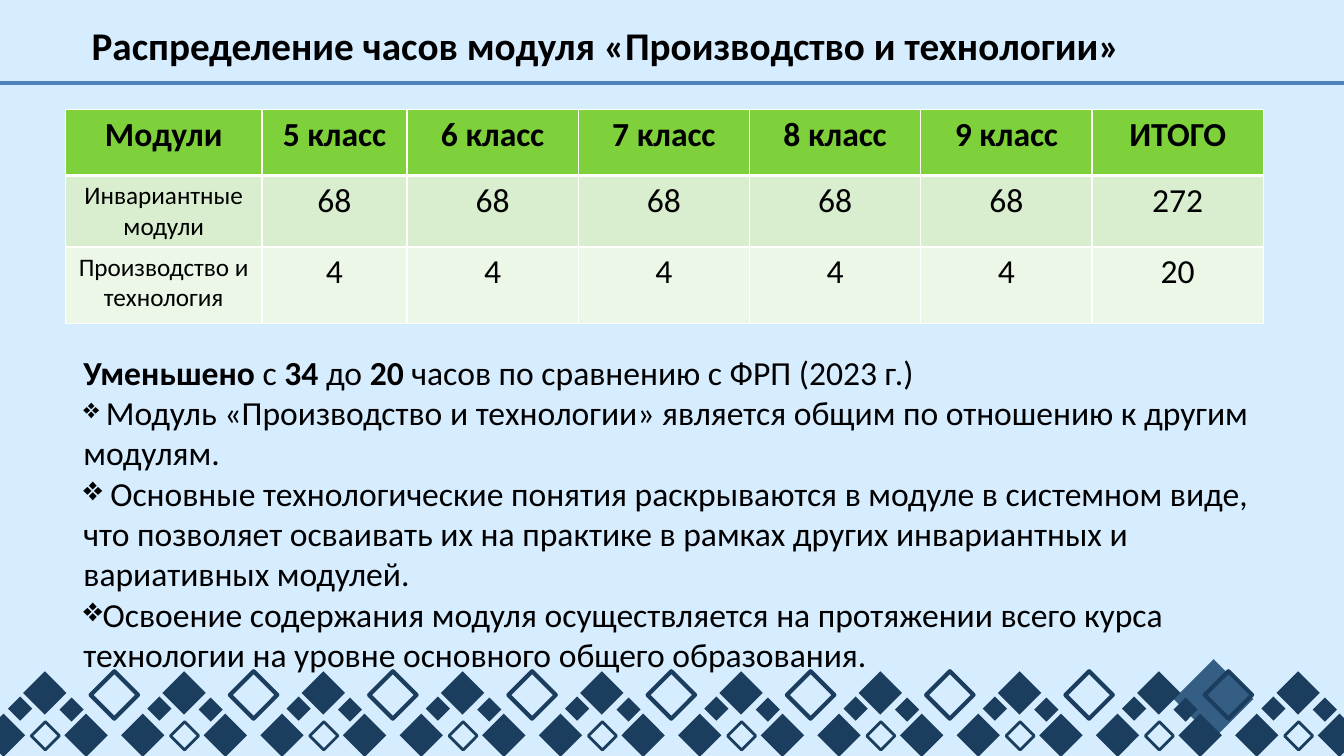
from lxml import etree
from pptx import Presentation
from pptx import util as u
from pptx.dml.color import RGBColor
from pptx.enum import shapes, text
from pptx.oxml import ns

COLORS = {
    "background": "D6ECFF", "text": "000000", "rule": "4F81BD",
    "navy": "1B3E5E", "steel": "345E84", "border": "FFFFFF",
    "head": "7FD13B", "band_dark": "D8EECE", "band_light": "ECF7E8",
}
FONT = "Calibri"

COLUMNS = [1.95, 1.44] + [1.7] * 5
HOURS = [
    ["Модули", "5 класс", "6 класс", "7 класс", "8 класс", "9 класс", "ИТОГО"],
    ["Инвариантные модули"] + ["68"] * 5 + ["272"],
    ["Производство и технология"] + ["4"] * 5 + ["20"],
]
ROW_STYLES = [(0.65, "head"), (0.65, "band_dark"), (0.76, "band_light")]

# Each paragraph: bullet flag, then runs of (text, size, bold)
SUMMARY = [
    (False, [("Уменьшено", 24, True), (" с ", 24, False), ("34", 24, True),
             (" до ", 24, False), ("20", 24, True),
             (" часов по сравнению с ФРП (2023 г.)", 24, False)]),
    (True, [(" ", 20, False),
            ("Модуль «Производство и технологии» является общим по отношению "
             "к другим модулям.", 24, False)]),
    (True, [(" Основные технологические понятия раскрываются в модуле в "
             "системном виде, что позволяет осваивать их на практике в рамках "
             "других инвариантных и вариативных модулей.", 24, False)]),
    (True, [("Освоение содержания модуля осуществляется на протяжении всего "
             "курса технологии на уровне основного общего образования.",
             24, False)]),
]

# One ornament unit: left, top, size, outline width (0 means filled)
PITCH = 12.44 / 9
UNIT = [
    (-0.18, 7.08, 0.43, 0), (0.31, 7.16, 0.28, 2), (0.23, 6.66, 0.43, 0),
    (0.64, 7.08, 0.43, 0), (0.08, 6.91, 0.24, 0), (0.59, 6.92, 0.24, 0),
]


def rgb(name):
    return RGBColor.from_string(COLORS[name])


class HoursSlide:
    def __init__(self, prs):
        self.s = prs.slides.add_slide(prs.slide_layouts[5])
        self.s.background.fill.solid()
        self.s.background.fill.fore_color.rgb = rgb("background")

    def style(self, r, size, bold):
        r.font.name, r.font.size, r.font.bold = FONT, u.Pt(size), bold
        r.font.color.rgb = rgb("text")

    def title(self, words, left, top, width, height):
        sp = self.s.shapes.title
        sp.left, sp.top = u.Inches(left), u.Inches(top)
        sp.width, sp.height = u.Inches(width), u.Inches(height)
        tf = sp.text_frame
        tf.text = words
        tf.auto_size = text.MSO_AUTO_SIZE.NONE
        tf.vertical_anchor = text.MSO_ANCHOR.TOP
        p = tf.paragraphs[0]
        p.alignment = text.PP_ALIGN.LEFT
        self.style(p.runs[0], 28, True)

    def diamond(self, left, top, size, outline=0, color="navy"):
        sp = self.s.shapes.add_shape(
            shapes.MSO_SHAPE.DIAMOND, u.Inches(left), u.Inches(top),
            u.Inches(size), u.Inches(size))
        sp.shadow.inherit = False
        if outline:
            sp.fill.background()
            sp.line.color.rgb = rgb(color)
            sp.line.width = u.Pt(outline)
        else:
            sp.fill.solid()
            sp.fill.fore_color.rgb = rgb(color)
            sp.line.fill.background()

    def ornament(self):
        self.diamond(11.65, 6.54, 0.79, color="steel")
        for i in range(10):
            for left, top, size, outline in UNIT:
                self.diamond(left + i * PITCH, top, size, outline)
        for i in range(9):
            self.diamond(0.9 + i * PITCH, 6.66, 0.47, 3)

    def rule(self, top, width):
        line = self.s.shapes.add_connector(
            shapes.MSO_CONNECTOR.STRAIGHT, 0, u.Inches(top),
            u.Inches(width), u.Inches(top))
        line.line.color.rgb = rgb("rule")
        line.line.width = u.Pt(3)
        etree.SubElement(line._element.spPr, ns.qn("a:effectLst"))

    def borders(self, cell, top, bottom):
        """Draw the four cell edges; must run before the cell is filled."""
        tcPr = cell._tc.get_or_add_tcPr()
        for edge, width in (("L", 1), ("R", 1), ("T", top), ("B", bottom)):
            ln = etree.SubElement(tcPr, ns.qn("a:ln" + edge), w=str(u.Pt(width)))
            fill = etree.SubElement(ln, ns.qn("a:solidFill"))
            etree.SubElement(fill, ns.qn("a:srgbClr"), val=COLORS["border"])

    def table(self, left, top):
        heights = [height for height, _ in ROW_STYLES]
        table = self.s.shapes.add_table(
            len(HOURS), len(COLUMNS), u.Inches(left), u.Inches(top),
            u.Inches(sum(COLUMNS)), u.Inches(sum(heights))).table
        for column, width in zip(table.columns, COLUMNS):
            column.width = u.Inches(width)
        for i, (height, color) in enumerate(ROW_STYLES):
            table.rows[i].height = u.Inches(height)
            for j, words in enumerate(HOURS[i]):
                cell = table.cell(i, j)
                self.borders(cell, 3 if i == 1 else 1, 3 if i == 0 else 1)
                cell.fill.solid()
                cell.fill.fore_color.rgb = rgb(color)
                cell.text_frame.text = words
                p = cell.text_frame.paragraphs[0]
                p.alignment = text.PP_ALIGN.CENTER
                self.style(p.runs[0], 18 if i and j == 0 else 24, i == 0)

    def summary(self, left, top, width, height):
        tf = self.s.shapes.add_textbox(
            u.Inches(left), u.Inches(top),
            u.Inches(width), u.Inches(height)).text_frame
        tf.word_wrap = True
        for i, (bullet, runs) in enumerate(SUMMARY):
            p = tf.paragraphs[0] if i == 0 else tf.add_paragraph()
            if bullet:
                pPr = p._p.get_or_add_pPr()
                etree.SubElement(pPr, ns.qn("a:buChar"), char="❖")
            for words, size, bold in runs:
                r = p.add_run()
                r.text = words
                self.style(r, size, bold)


def main():
    prs = Presentation()
    prs.slide_width, prs.slide_height = u.Inches(13.34), u.Inches(7.5)
    slide = HoursSlide(prs)
    slide.ornament()
    slide.rule(0.82, 13.34)
    slide.title("Распределение часов модуля «Производство и технологии»",
                0.81, 0.16, 12.03, 0.57)
    slide.table(0.65, 1.09)
    slide.summary(0.73, 3.44, 11.88, 3.33)
    prs.save("out.pptx")


if __name__ == "__main__":
    main()
